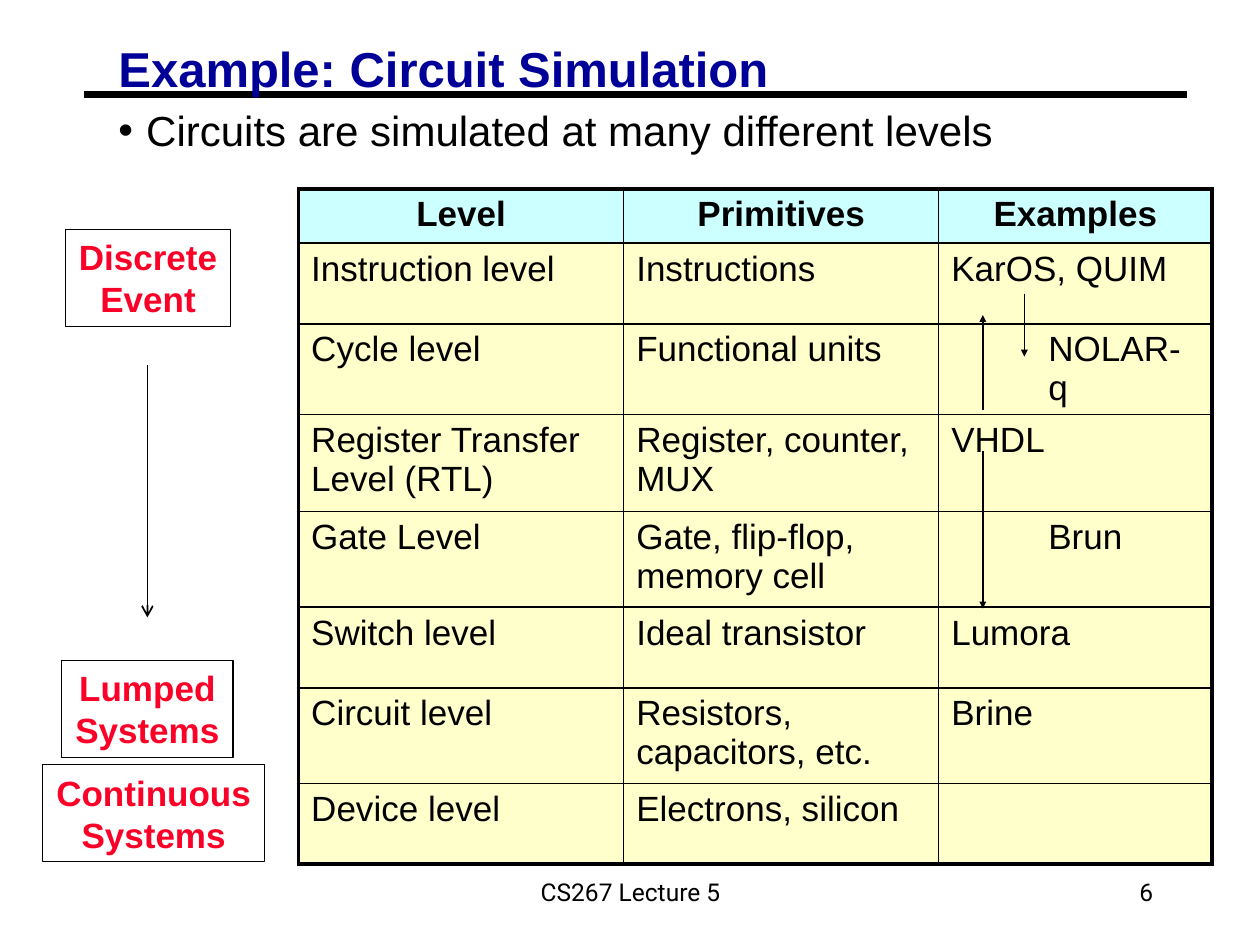
from lxml import etree
from pptx import Presentation
from pptx.dml.color import RGBColor
from pptx.enum.shapes import MSO_CONNECTOR, MSO_SHAPE
from pptx.enum.text import MSO_ANCHOR, MSO_AUTO_SIZE, PP_ALIGN
from pptx.oxml.ns import qn
from pptx.util import Emu, Pt

PX = 9144  # EMU, 100 px to the inch
STRAIGHT = MSO_CONNECTOR.STRAIGHT
RECTANGLE = MSO_SHAPE.RECTANGLE
TOP, MIDDLE = MSO_ANCHOR.TOP, MSO_ANCHOR.MIDDLE
LEFT, CENTER, RIGHT = PP_ALIGN.LEFT, PP_ALIGN.CENTER, PP_ALIGN.RIGHT
FIXED = MSO_AUTO_SIZE.NONE

COLORS = {
    "ink": "000000",
    "title": "000099",
    "stage": "FC0128",
    "header": "CCFFFF",
    "body": "FFFFCC",
}

COLUMN_WIDTHS = [258, 250, 217]
ROW_HEIGHTS = [43, 64, 63, 77, 76, 64, 76, 64]
ROWS = [
    ("Level", "Primitives", "Examples"),
    ("Instruction level", "Instructions", "KarOS, QUIM"),
    ("Cycle level", "Functional units", "NOLAR-q"),
    ("Register Transfer Level (RTL)", "Register, counter, MUX", "VHDL"),
    ("Gate Level", "Gate, flip-flop, memory cell", "Brun"),
    ("Switch level", "Ideal transistor", "Lumora"),
    ("Circuit level", "Resistors, capacitors, etc.", "Brine"),
    ("Device level", "Electrons, silicon", ""),
]
INDENTED_EXAMPLES = {"NOLAR-q", "Brun"}
EXAMPLE_INDENT = 77


def px(*lengths):
    return [Emu(length * PX) for length in lengths]


def rgb(name):
    return RGBColor.from_string(COLORS[name])


def style(para, size, color="ink", bold=False, align=LEFT, font="Arial"):
    para.alignment = align
    para.font.name = font
    para.font.size = Pt(size)
    para.font.bold = bold
    para.font.color.rgb = rgb(color)


def set_frame(frame, anchor=TOP, side=10, edge=5, wrap=True):
    frame.auto_size = FIXED
    frame.word_wrap = wrap
    frame.vertical_anchor = anchor
    frame.margin_left, frame.margin_right = px(side, side)
    frame.margin_top, frame.margin_bottom = px(edge, edge)


def add_line(page, start, end, width=1, head=None, head_size="med"):
    line = page.shapes.add_connector(STRAIGHT, *px(*start, *end))
    line.line.color.rgb = rgb("ink")
    line.line.width = Pt(width)
    if head:
        outline = line.line._get_or_add_ln()
        etree.SubElement(outline, qn("a:tailEnd"), type=head,
                         w=head_size, len=head_size)
    etree.SubElement(line.element.spPr, qn("a:effectLst"))
    return line


def add_title(page, box):
    title = page.shapes.title
    title.left, title.top, title.width, title.height = px(*box)
    set_frame(title.text_frame, side=7, edge=3)
    para = title.text_frame.paragraphs[0]
    para.text = "Example: Circuit Simulation"
    para.line_spacing = 0.87
    style(para, 28, "title", bold=True)
    left, top = box[:2]
    rule = add_line(page, (left - 20, top + 41), (left + 855, top + 41), 3.75)
    title.element.addprevious(rule.element)  # the rule lies behind the title


def add_bullet(page, box):
    frame = page.shapes.add_textbox(*px(*box)).text_frame
    set_frame(frame, side=7, edge=3)
    para = frame.paragraphs[0]
    para.text = "Circuits are simulated at many different levels"
    para.space_before = Pt(3.6)
    style(para, 24)
    properties = para._p.get_or_add_pPr()
    properties.set("marL", str(22 * PX))
    properties.set("indent", str(-22 * PX))
    etree.SubElement(properties, qn("a:buFont"), typeface="Arial")
    etree.SubElement(properties, qn("a:buChar"), char="•")
    # bullet marks come before the default run properties
    properties.append(properties.find(qn("a:defRPr")))


def set_borders(cell, widths):
    """Draw the left, right, top and bottom borders, in points."""
    properties = cell._tc.get_or_add_tcPr()
    for position, (side, width) in enumerate(zip("LRTB", widths)):
        border = etree.Element(qn(f"a:ln{side}"), w=str(Pt(width)))
        fill = etree.SubElement(border, qn("a:solidFill"))
        etree.SubElement(fill, qn("a:srgbClr"), val=COLORS["ink"])
        properties.insert(position, border)


def add_level_table(page, box):
    last_row, last_column = len(ROWS) - 1, len(COLUMN_WIDTHS) - 1
    table = page.shapes.add_table(
        last_row + 1, last_column + 1, *px(*box)).table
    table.horz_banding = False
    for column, width in zip(table.columns, px(*COLUMN_WIDTHS)):
        column.width = width
    for row, height in zip(table.rows, px(*ROW_HEIGHTS)):
        row.height = height
    for r, texts in enumerate(ROWS):
        header = r == 0
        for c, text in enumerate(texts):
            cell = table.cell(r, c)
            cell.fill.solid()
            cell.fill.fore_color.rgb = rgb("header" if header else "body")
            para = cell.text_frame.paragraphs[0]
            para.text = text
            style(para, 20, bold=header, align=CENTER if header else LEFT)
            if text in INDENTED_EXAMPLES:
                para._p.get_or_add_pPr().set("marL", str(EXAMPLE_INDENT * PX))
            outer = (c == 0, c == last_column, header, r == last_row)
            set_borders(cell, [2.25 if edge else 1 for edge in outer])


def add_example_arrows(page, box):
    """Show which levels the example tools span."""
    left, top = box[:2]
    for x, start, end in [(543, 175, 100), (543, 208, 333), (576, 83, 133)]:
        add_line(page, (left + x, top + start), (left + x, top + end),
                 head="triangle", head_size="sm")


def add_stages(page, box):
    left, top = box[:2]
    stages = [
        (("Discrete", "Event"), 18, 0, 131),
        (("Lumped", "Systems"), 15, 342, 136),
        (("Continuous", "Systems"), 0, 425, 176),
    ]
    for lines, shift, offset, width in stages:
        stage = page.shapes.add_shape(
            RECTANGLE, *px(left + shift, top + offset, width, 77))
        stage.shadow.inherit = False
        stage.fill.background()
        stage.line.color.rgb = rgb("ink")
        stage.line.width = Pt(0.75)
        frame = stage.text_frame
        set_frame(frame, wrap=False)
        frame.text = "\n".join(lines)
        for para in frame.paragraphs:
            style(para, 20, "stage", bold=True, align=CENTER)
    add_line(page, (left + 83, top + 108), (left + 83, top + 308),
             head="arrow")


def add_footer(page, box, text, align):
    frame = page.shapes.add_textbox(*px(*box)).text_frame
    set_frame(frame, MIDDLE)
    para = frame.paragraphs[0]
    para.text = text
    style(para, 14, align=align, font="Roboto")


def main():
    deck = Presentation()
    deck.slide_width, deck.slide_height = px(1000, 750)
    page = deck.slides.add_slide(deck.slide_layouts[5])
    table_box = (237, 150, 725, 527)
    add_title(page, (87, 34, 854, 46))
    add_footer(page, (342, 683, 317, 50), "CS267 Lecture 5", CENTER)
    add_footer(page, (717, 683, 208, 50), "6", RIGHT)
    add_bullet(page, (87, 80, 875, 45))
    add_level_table(page, table_box)
    add_example_arrows(page, table_box)
    add_stages(page, (34, 182, 176, 502))
    deck.save("out.pptx")


if __name__ == "__main__":
    main()
